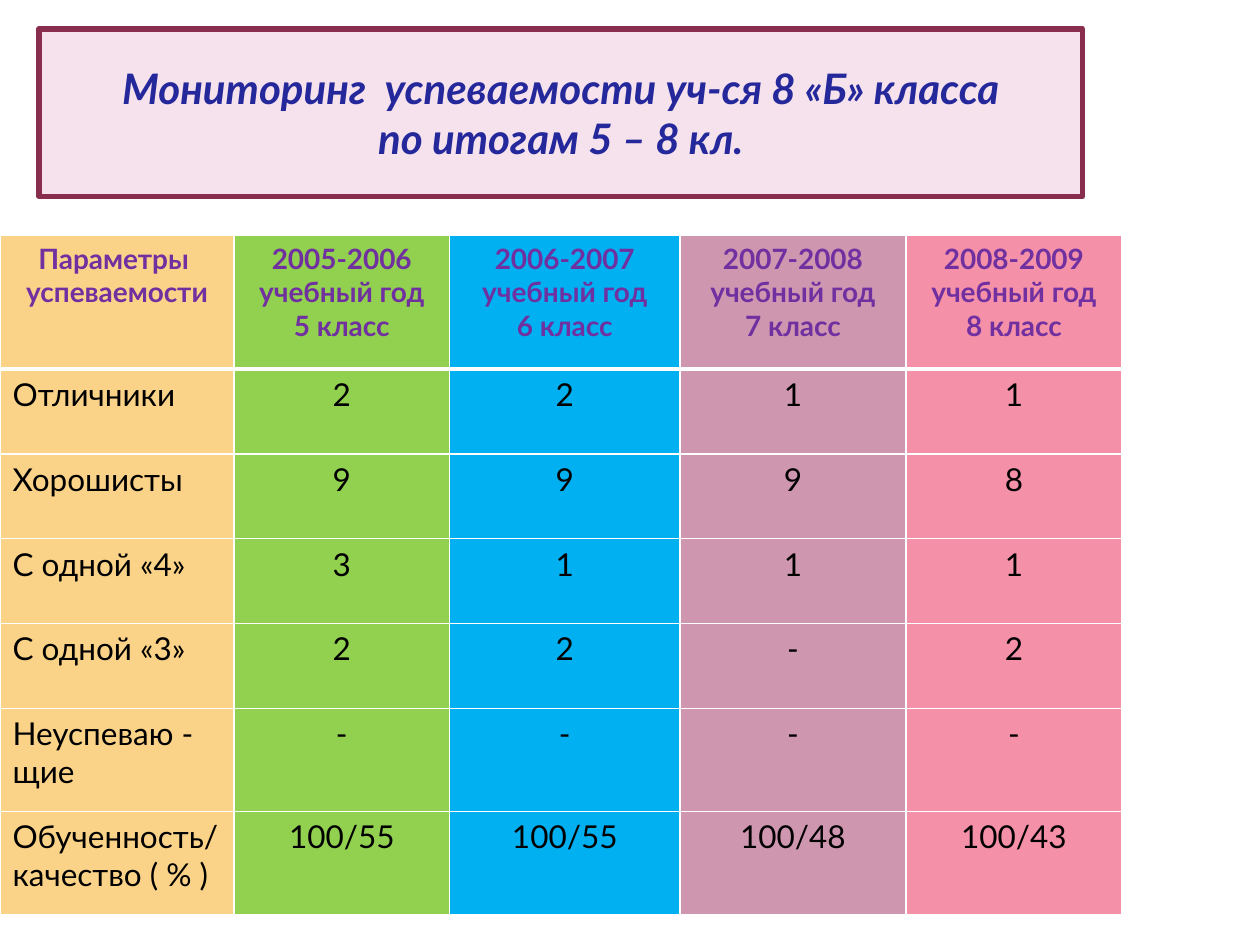
import dataclasses

import pptx
import pptx.dml.color
import pptx.enum.text
import pptx.oxml
import pptx.oxml.ns
import pptx.util

Cm = pptx.util.Cm
ALIGN = pptx.enum.text.PP_ALIGN
ANCHOR = pptx.enum.text.MSO_ANCHOR


def rgb(value):
    return pptx.dml.color.RGBColor.from_string(value)


@dataclasses.dataclass(frozen=True)
class Theme:
    font: str = "Lato"
    title_text: str = "25289B"
    title_fill: str = "F5E2ED"
    title_line: str = "882D4D"
    header_text: str = "7030A0"
    body_text: str = "000000"
    border: str = "FFFFFF"
    columns: tuple = ("FBD388", "92D050", "00B0F0", "CF96B0", "F490A8")
    title_size: int = 24
    header_size: int = 16
    body_size: int = 18
    title_line_width: float = 3.15
    border_width: int = 1
    header_border_width: int = 3


class SlideBuilder:
    def __init__(self, slide, theme):
        self.slide = slide
        self.theme = theme

    def format_text(self, text_frame, color, alignment, **values):
        values["name"] = self.theme.font
        for paragraph in text_frame.paragraphs:
            paragraph.alignment = alignment
            for name, value in values.items():
                setattr(paragraph.font, name, value)
            paragraph.font.color.rgb = rgb(color)

    def add_title(self, text, left, top, width, height):
        theme = self.theme
        shape = self.slide.shapes.title
        bounds = {"left": left, "top": top, "width": width, "height": height}
        for name, value in bounds.items():
            setattr(shape, name, Cm(value))
        shape.element.spPr.append(pptx.oxml.parse_xml(
            f'<a:prstGeom {pptx.oxml.ns.nsdecls("a")} prst="roundRect"><a:avLst/></a:prstGeom>'))
        shape.shadow.inherit = False
        shape.fill.solid()
        shape.fill.fore_color.rgb = rgb(theme.title_fill)
        shape.line.color.rgb = rgb(theme.title_line)
        shape.line.width = pptx.util.Pt(theme.title_line_width)

        text_frame = shape.text_frame
        text_frame.text = text
        frame_format = {
            "word_wrap": True,
            "auto_size": pptx.enum.text.MSO_AUTO_SIZE.NONE,
            "vertical_anchor": ANCHOR.MIDDLE,
        }
        for name, value in frame_format.items():
            setattr(text_frame, name, value)
        self.format_text(text_frame, theme.title_text, ALIGN.CENTER,
                         size=pptx.util.Pt(theme.title_size), bold=True, italic=True)

    def set_borders(self, cell, **widths):
        """Draw borders, given in points by side; call before filling the cell."""
        properties = cell._tc.get_or_add_tcPr()
        for side in ("L", "R", "T", "B"):
            width = pptx.util.Pt(widths.get(side, self.theme.border_width))
            properties.append(pptx.oxml.parse_xml(
                f'<a:ln{side} {pptx.oxml.ns.nsdecls("a")} w="{width}"><a:solidFill>'
                f'<a:srgbClr val="{self.theme.border}"/></a:solidFill></a:ln{side}>'))

    def fill_cell(self, cell, text, row, column):
        theme = self.theme
        is_header = row == 0
        border_sides = {0: "B", 1: "T"}
        thick = {border_sides[row]: theme.header_border_width} if row in border_sides else {}
        self.set_borders(cell, **thick)
        cell.fill.solid()
        cell.fill.fore_color.rgb = rgb(theme.columns[column])
        cell.vertical_anchor = ANCHOR.TOP
        cell.text = text
        self.format_text(
            cell.text_frame,
            theme.header_text if is_header else theme.body_text,
            ALIGN.CENTER if is_header or column else ALIGN.LEFT,
            size=pptx.util.Pt(theme.header_size if is_header else theme.body_size),
            bold=is_header)

    def add_table(self, rows, left, top, widths, heights):
        table = self.slide.shapes.add_table(
            len(rows), len(widths), Cm(left), Cm(top),
            Cm(sum(widths)), Cm(sum(heights))).table
        table.horz_banding = False
        for column, width in zip(table.columns, widths):
            column.width = Cm(width)
        for row, height in zip(table.rows, heights):
            row.height = Cm(height)
        for row, texts in enumerate(rows):
            for column, text in enumerate(texts):
                self.fill_cell(table.cell(row, column), text, row, column)


def main():
    presentation = pptx.Presentation()
    presentation.slide_width = Cm(25.4)
    presentation.slide_height = Cm(19.05)
    title_only = presentation.slide_layouts[5]
    builder = SlideBuilder(presentation.slides.add_slide(title_only), Theme())

    years = [f"{2000 + grade}-{2001 + grade}\nучебный год\n{grade} класс"
             for grade in range(5, 9)]
    rows = [
        ["Параметры \nуспеваемости", *years],
        ["Отличники", "2", "2", "1", "1"],
        ["Хорошисты", "9", "9", "9", "8"],
        ["С одной «4»", "3", "1", "1", "1"],
        ["С одной «3»", "2", "2", "-", "2"],
        ["Неуспеваю -\nщие", "-", "-", "-", "-"],
        ["Обученность/качество ( % )", "100/55", "100/55", "100/48", "100/43"],
    ]
    builder.add_table(rows, left=0, top=4.75,
                      widths=[4.72, 4.34, 4.65, 4.55, 4.36],
                      heights=[2.69] + [1.71] * 4 + [2.08] * 2)
    builder.add_title("Мониторинг  успеваемости уч-ся 8 «Б» класса\nпо итогам 5 – 8 кл.",
                      left=0.79, top=0.58, width=21.03, height=3.38)
    presentation.save("out.pptx")


if __name__ == "__main__":
    main()
